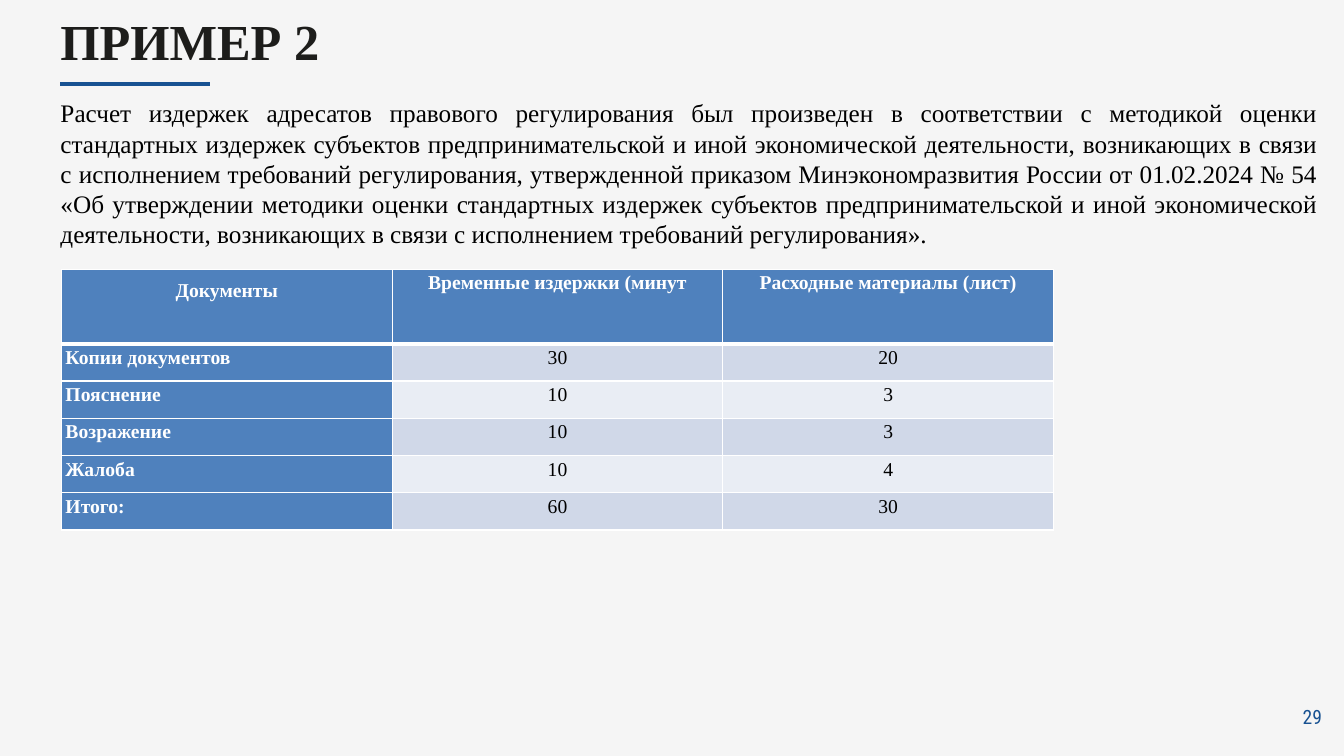
from dataclasses import dataclass

from lxml import etree
from pptx import Presentation
from pptx import util as u
from pptx.dml.color import RGBColor
from pptx.enum import text
from pptx.oxml import ns

ALIGN = text.PP_ALIGN


@dataclass(frozen=True)
class Theme:
    serif: str = "Times New Roman"
    narrow: str = "Roboto Condensed"
    paper: str = "F5F5F5"
    white: str = "FFFFFF"
    black: str = "000000"
    ink: str = "1D1D1B"
    accent: str = "185292"
    head: str = "4F81BD"
    bands: tuple[str, str] = ("D0D8E8", "E9EDF4")
    title: int = 36
    body: int = 18
    small: int = 14


@dataclass(frozen=True)
class Box:
    """A frame given as shares of the slide's width and height."""
    x: float
    y: float
    w: float
    h: float

    def emu(self) -> tuple[int, int, int, int]:
        return (int(self.x / WIDE * W), int(self.y / HIGH * H),
                int(self.w / WIDE * W), int(self.h / HIGH * H))


@dataclass(frozen=True)
class CostRow:
    document: str
    minutes: str
    sheets: str


T = Theme()
WIDE, HIGH = 13.33, 7.5
W, H = u.Inches(WIDE), u.Inches(HIGH)
LEFT = 0.6

TITLE = Box(LEFT, 0.1, 6, 0.58)
RULE = Box(LEFT, 0.83, 1.48, 0)
BODY = Box(0.5, 0.92, 12.67, 1.62)
TABLE = Box(0.61, 2.67, 9.84, 2.59)
NUMBER = Box(12.88, 7, 0.37, 0.22)

INTRO = (
    "Расчет издержек адресатов правового регулирования был произведен в соответствии "
    "с методикой оценки стандартных издержек субъектов предпринимательской и иной "
    "экономической деятельности, возникающих в связи с исполнением требований "
    "регулирования, утвержденной приказом Минэкономразвития России от 01.02.2024 № 54 "
    "«Об утверждении методики оценки стандартных издержек субъектов предпринимательской "
    "и иной экономической деятельности, возникающих в связи с исполнением требований "
    "регулирования»."
)
COSTS = [
    CostRow("Документы", "Временные издержки (минут", "Расходные материалы (лист)"),
    CostRow("Копии документов", "30", "20"),
    CostRow("Пояснение", "10", "3"),
    CostRow("Возражение", "10", "3"),
    CostRow("Жалоба", "10", "4"),
    CostRow("Итого:", "60", "30"),
]


def rgb(value: str) -> RGBColor:
    return RGBColor.from_string(value)


def place(sp, box: Box) -> None:
    sp.left, sp.top, sp.width, sp.height = box.emu()


def write(tf, words: str, size: int, color: str, font: str = T.serif,
          bold: bool = False, align=ALIGN.LEFT, spacing=1.0):
    tf.text = words
    p = tf.paragraphs[0]
    p.alignment, p.line_spacing = align, spacing
    p.space_before = p.space_after = u.Pt(0)
    f = p.runs[0].font
    f.name, f.size, f.bold = font, u.Pt(size), bold
    f.color.rgb = rgb(color)
    return p


def frame(tf, inset: float = 0) -> None:
    tf.word_wrap = True
    tf.auto_size = text.MSO_AUTO_SIZE.NONE
    tf.vertical_anchor = text.MSO_ANCHOR.TOP
    tf.margin_left = tf.margin_right = u.Inches(inset)
    tf.margin_top = tf.margin_bottom = u.Inches(inset / 2)


def border(cell, widths: dict[str, int]) -> None:
    """Draw white cell borders; they stand before the fill in tcPr."""
    tc_pr = cell._tc.get_or_add_tcPr()
    for i, (side, width) in enumerate(widths.items()):
        ln = etree.Element(ns.qn(f"a:ln{side}"), w=str(u.Pt(width)))
        fill = etree.SubElement(ln, ns.qn("a:solidFill"))
        etree.SubElement(fill, ns.qn("a:srgbClr"), val=T.white)
        tc_pr.insert(i, ln)


def add_cost_table(s) -> None:
    table = s.shapes.add_table(len(COSTS), 3, *TABLE.emu()).table
    # The header is two units high, every other row one
    unit = int(TABLE.h / (len(COSTS) + 1) / HIGH * H)
    for i, cost in enumerate(COSTS):
        table.rows[i].height = unit * (2 if i == 0 else 1)
        for j, words in enumerate((cost.document, cost.minutes, cost.sheets)):
            cell = table.cell(i, j)
            strong = i == 0 or j == 0
            cell.margin_left = cell.margin_right = u.Inches(0.04)
            cell.margin_top = cell.margin_bottom = 0
            cell.fill.solid()
            cell.fill.fore_color.rgb = rgb(T.head if strong else T.bands[(i - 1) % 2])
            border(cell, {"L": 1, "R": 1, "T": 3 if i == 1 else 1, "B": 3 if i == 0 else 1})
            write(cell.text_frame, words, T.small, T.white if strong else T.black,
                  bold=strong, align=ALIGN.LEFT if i and j == 0 else ALIGN.CENTER,
                  spacing=1.5 if i == j == 0 else 1.15)


def main() -> None:
    prs = Presentation()
    prs.slide_width, prs.slide_height = W, H
    s = prs.slides.add_slide(prs.slide_layouts[1])
    s.background.fill.solid()
    s.background.fill.fore_color.rgb = rgb(T.paper)

    # Title and the rule under it
    title = s.shapes.title
    place(title, TITLE)
    frame(title.text_frame)
    write(title.text_frame, "ПРИМЕР 2", T.title, T.ink, bold=True)
    x, y, w, _ = RULE.emu()
    rule = s.shapes.add_connector(1, x, y, x + w, y)
    rule.line.color.rgb, rule.line.width = rgb(T.accent), u.Pt(3)
    etree.SubElement(rule._element.spPr, ns.qn("a:effectLst"))

    # Introduction
    body = s.placeholders[1]
    place(body, BODY)
    frame(body.text_frame, 0.1)
    p = write(body.text_frame, INTRO, T.body, T.black, align=ALIGN.JUSTIFY)
    p_pr = p._p.get_or_add_pPr()
    p_pr.set("marL", "0")
    p_pr.set("indent", "0")
    etree.SubElement(p_pr, ns.qn("a:buNone"))

    add_cost_table(s)

    # Page number
    number = s.shapes.add_textbox(*NUMBER.emu())
    frame(number.text_frame)
    p = write(number.text_frame, "29", T.small, T.accent, T.narrow, spacing=u.Pt(16.4))
    p._p.get_or_add_pPr().set("marL", str(u.Inches(0.04)))
    p.runs[0].font._element.set("spc", "10")

    prs.save("out.pptx")


if __name__ == "__main__":
    main()
